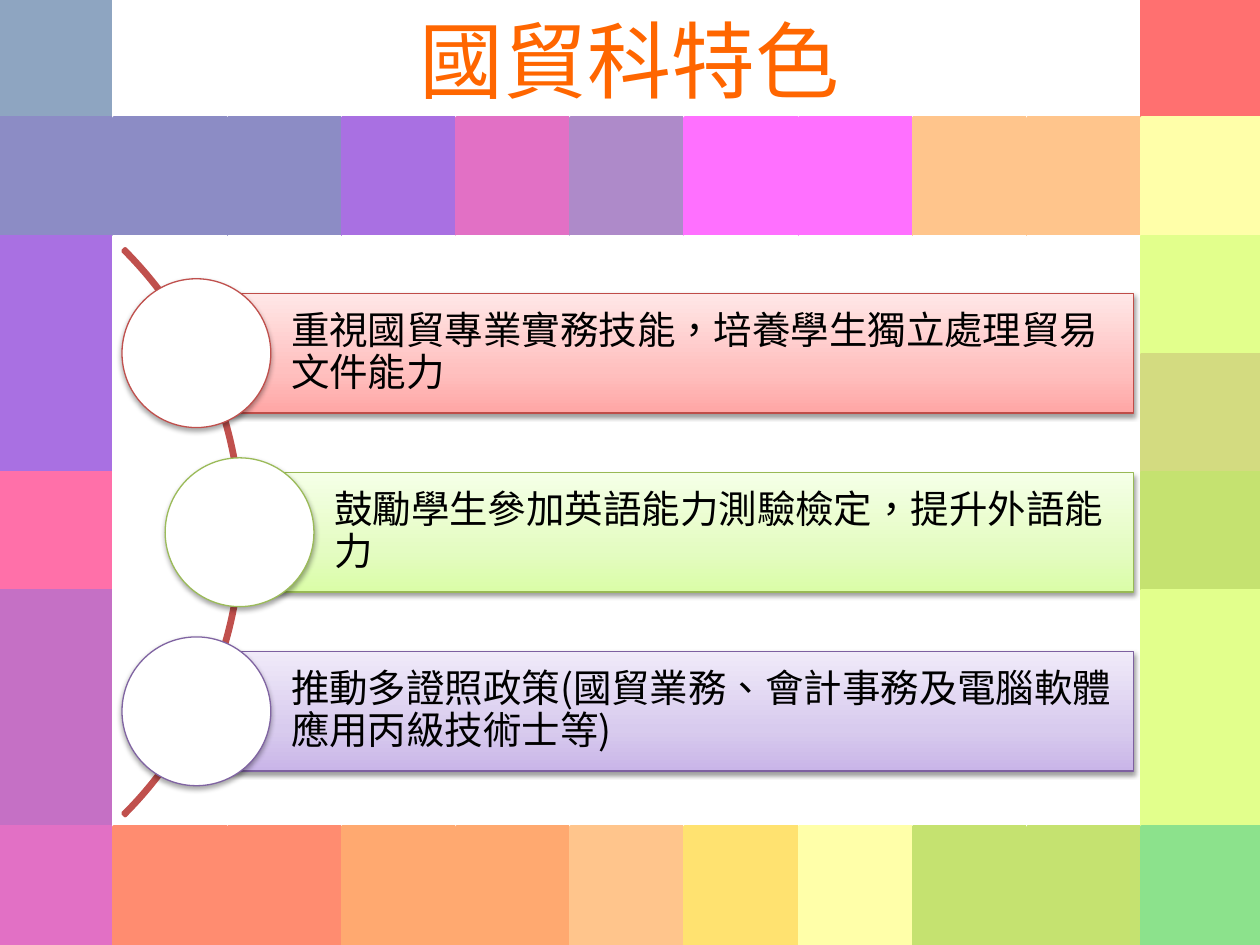
from copy import deepcopy

from lxml.etree import SubElement
from pptx import Presentation
from pptx.dml.color import RGBColor
from pptx.enum.shapes import MSO_SHAPE as SHAPE
from pptx.enum.text import MSO_ANCHOR as ANCHOR, PP_ALIGN as ALIGN
from pptx.oxml.ns import qn
from pptx.util import Cm, Pt

FONT = "Noto Sans CJK SC"
TITLE = "國貿科特色"

# text, left of the bar, bar line, circle line, gradient from bottom to top
FEATURES = [
    ("重視國貿專業實務技能，培養學生獨立處理貿易文件能力", 3.96,
     "BF4C48", "C0504D", ("FFA6A5", "FFC0BF", "FFE7E7")),
    ("鼓勵學生參加英語能力測驗檢定，提升外語能力", 4.83,
     "98B955", "9BBB59", ("DAFDA7", "E4FCC2", "F5FFE7")),
    ("推動多證照政策(國貿業務、會計事務及電腦軟體應用丙級技術士等)", 3.96,
     "7D60A0", "8064A2", ("C9B5E8", "D8CBEE", "F0EAF9")),
]
GRADIENT_POSITIONS = (0, 0.35, 1)

PALETTE = {
    ".": "FFFFFF", "b": "376092", "n": "333399", "v": "6600CC", "p": "FF0066",
    "u": "990099", "m": "CC0099", "d": "7030A0", "f": "FF00FF", "r": "FF0000",
    "s": "FF3300", "o": "FF6600", "a": "FF9933", "g": "FFCC00", "y": "FFFF66",
    "l": "CCFF33", "k": "B1C01E", "e": "99CC00", "t": "33CC33",
}
MOSAIC = [
    "b.........r",
    "nnnvmdffaay",
    "v.........l",
    "v.........k",
    "p.........e",
    "u.........l",
    "u.........l",
    "mssooagyeet",
]

SLIDE_W, SLIDE_H = 25.4, 19.05
TILE = SLIDE_H / len(MOSAIC)
COLUMN_STEP = (SLIDE_W - TILE) / (len(MOSAIC[0]) - 1)
BAR_RIGHT, BAR_H, CIRCLE = 22.85, 2.41, 3.0
MIDDLE_Y, FEATURE_STEP = 10.73, 3.61
ARC, ARC_LEFT = 16.16, -11.27


def rgb(color):
    return RGBColor.from_string(color)


def add_shape(kind, x, y, w, h, fill=None, line=None, width=2):
    sp = s.shapes.add_shape(kind, Cm(x), Cm(y), Cm(w), Cm(h))
    sp.shadow.inherit = False
    if fill:
        sp.fill.solid()
        sp.fill.fore_color.rgb = rgb(fill)
    else:
        sp.fill.background()
    if line:
        sp.line.color.rgb = rgb(line)
        sp.line.width = Pt(width)
    else:
        sp.line.fill.background()
    return sp


def set_alpha(color_element, percent):
    SubElement(color_element, qn("a:alpha"), val=str(percent * 1000))


def add_shadow(sp, distance, percent):
    effects = sp.element.spPr.find(qn("a:effectLst"))
    shadow = SubElement(effects, qn("a:outerShdw"), blurRad=str(Pt(3.1)),
                        dist=str(Pt(distance)), dir="5400000", rotWithShape="0")
    set_alpha(SubElement(shadow, qn("a:srgbClr"), val="000000"), percent)


def set_gradient(sp, colors):
    sp.fill.gradient()
    sp.fill.gradient_angle = 90
    first = sp.element.spPr.find(".//" + qn("a:gs"))
    first.addnext(deepcopy(first))
    for stop, color, position in zip(sp.fill.gradient_stops, colors, GRADIENT_POSITIONS):
        stop.color.rgb = rgb(color)
        stop.position = position


def write(sp, text, size, color, align):
    tf = sp.text_frame
    tf.word_wrap = True
    tf.vertical_anchor = ANCHOR.MIDDLE
    p = tf.paragraphs[0]
    p.alignment = align
    r = p.add_run()
    r.text = text
    r.font.size = Pt(size)
    r.font.color.rgb = rgb(color)
    r.font.name = FONT
    props = r.font._element
    props.set("lang", "zh-TW")
    SubElement(props, qn("a:ea"), typeface=FONT)
    return tf


prs = Presentation()
prs.slide_width, prs.slide_height = Cm(SLIDE_W), Cm(SLIDE_H)
s = prs.slides.add_slide(prs.slide_layouts[5])

for col, column in enumerate(zip(*MOSAIC)):
    for row, key in enumerate(column):
        add_shape(SHAPE.RECTANGLE, col * COLUMN_STEP, row * TILE, TILE, TILE,
                  PALETTE[key], PALETTE[key])
veil = add_shape(SHAPE.RECTANGLE, -0.71, -1.47, 27.81, 21.01, "FFFFFF")
set_alpha(veil.element.spPr.find(".//" + qn("a:srgbClr")), 44)

title = s.shapes.title
title.left, title.top, title.width, title.height = Cm(2.29), Cm(0), Cm(20.8), Cm(TILE)
write(title, TITLE, 48, "FF6600", ALIGN.CENTER)
title.element.getparent().append(title.element)  # in front of the mosaic

arc = add_shape(SHAPE.BLOCK_ARC, ARC_LEFT, MIDDLE_Y - ARC / 2, ARC, ARC, line="C0504D")
for i, value in enumerate((189, 27, 0.004)):
    arc.adjustments[i] = value

for i, (text, left, bar_line, circle_line, colors) in enumerate(FEATURES):
    y = MIDDLE_Y + (i - 1) * FEATURE_STEP
    bar = add_shape(SHAPE.RECTANGLE, left, y - BAR_H / 2, BAR_RIGHT - left, BAR_H,
                    line=bar_line, width=0.75)
    set_gradient(bar, colors)
    add_shadow(bar, 1.6, 38)
    tf = write(bar, text, 22, "000000", ALIGN.LEFT)
    tf.margin_left = Cm(1.91)
    tf.margin_top = tf.margin_right = tf.margin_bottom = Cm(0.15)
    tf.paragraphs[0].line_spacing = 0.9
    circle = add_shape(SHAPE.OVAL, left - CIRCLE / 2, y - CIRCLE / 2, CIRCLE, CIRCLE,
                       "FFFFFF", circle_line, 0.75)
    add_shadow(circle, 1.8, 35)

prs.save("out.pptx")
